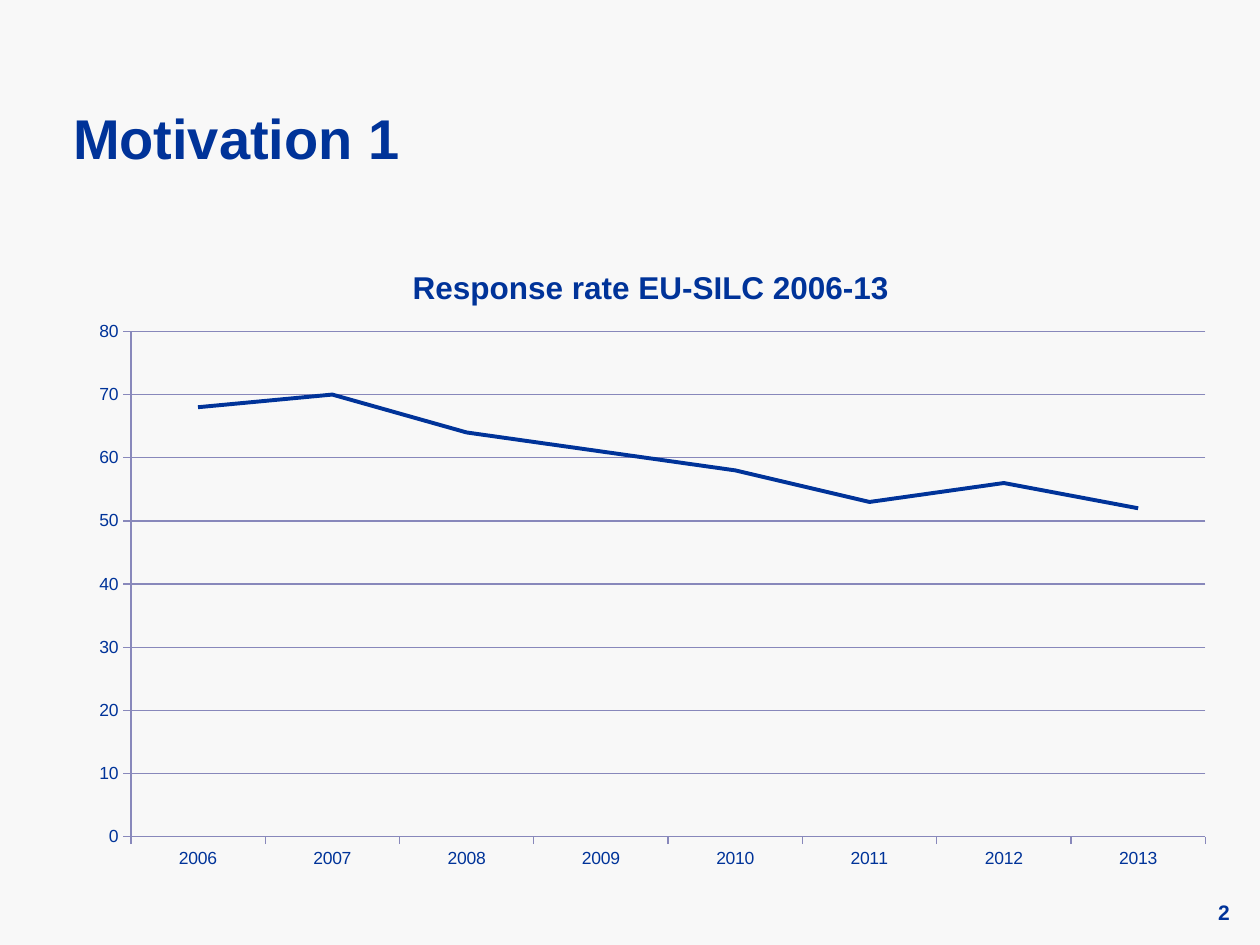
"""Build a slide with a line chart of EU-SILC response rates."""
import lxml.etree
import pptx
import pptx.chart.data
import pptx.dml.color
import pptx.enum.chart
import pptx.enum.text
import pptx.oxml.ns
import pptx.util

NAVY = pptx.dml.color.RGBColor(0x00, 0x33, 0x99)
GRID = pptx.dml.color.RGBColor(0x88, 0x88, 0xBB)
PAPER = pptx.dml.color.RGBColor(0xF8, 0xF8, 0xF8)
FONT = "Arial"
WIDTH, HEIGHT = pptx.util.Inches(10), pptx.util.Inches(7.5)
LEFT, CONTENT_WIDTH = 0.058, 0.917
RATES = {"2006": 68, "2007": 70, "2008": 64, "2009": 61,
         "2010": 58, "2011": 53, "2012": 56, "2013": 52}
PLOT_AREA = {"x": 0.05, "y": 0.14, "w": 0.93, "h": 0.79}


def place(left, top, width, height):
    """Turn shares of the slide's size into lengths."""
    return (int(left * WIDTH), int(top * HEIGHT),
            int(width * WIDTH), int(height * HEIGHT))


def style_font(font, size, bold=False):
    font.name, font.size, font.bold = FONT, pptx.util.Pt(size), bold
    font.color.rgb = NAVY


def add_text(slide, text, box, size, alignment, anchor):
    frame = slide.shapes.add_textbox(*place(*box)).text_frame
    frame.word_wrap = True
    frame.margin_left = frame.margin_right = 0
    frame.margin_top = frame.margin_bottom = 0
    frame.vertical_anchor = anchor
    paragraph = frame.paragraphs[0]
    paragraph.text = text
    paragraph.alignment = alignment
    style_font(paragraph.font, size, bold=True)


def style_line(line, color, width):
    line.color.rgb = color
    line.width = pptx.util.Pt(width)


def set_plot_area(chart, shares):
    """Fix the inner plot area as shares of the chart's size."""
    tag = pptx.oxml.ns.qn
    plot_area = chart.plots[0]._element.getparent()
    for layout in plot_area.findall(tag("c:layout")):
        plot_area.remove(layout)
    layout = lxml.etree.Element(tag("c:layout"))
    plot_area.insert(0, layout)
    manual = lxml.etree.SubElement(layout, tag("c:manualLayout"))
    settings = {"layoutTarget": "inner", "xMode": "edge", "yMode": "edge", **shares}
    for name, value in settings.items():
        lxml.etree.SubElement(manual, tag(f"c:{name}")).set("val", str(value))


def add_line_chart(slide, title, rates, box):
    data = pptx.chart.data.CategoryChartData(number_format="0")
    data.categories = list(rates)
    data.add_series("Series 1", list(rates.values()))
    chart = slide.shapes.add_chart(
        pptx.enum.chart.XL_CHART_TYPE.LINE, *place(*box), data).chart
    style_font(chart.font, 10)
    chart.has_legend = False
    chart.has_title = True
    chart.chart_title.include_in_layout = False
    heading = chart.chart_title.text_frame.paragraphs[0]
    heading.text = title
    style_font(heading.font, 18, bold=True)

    for axis in (chart.category_axis, chart.value_axis):
        axis.major_tick_mark = pptx.enum.chart.XL_TICK_MARK.OUTSIDE
        axis.minor_tick_mark = pptx.enum.chart.XL_TICK_MARK.NONE
        style_line(axis.format.line, GRID, 0.75)
    values = chart.value_axis
    values.minimum_scale, values.maximum_scale, values.major_unit = 0, 80, 10
    values.tick_labels.number_format = "0"
    values.tick_labels.number_format_is_linked = False
    style_line(values.major_gridlines.format.line, GRID, 0.75)

    chart.plots[0].vary_by_categories = False
    series = chart.plots[0].series[0]
    series.smooth = False
    series.marker.style = pptx.enum.chart.XL_MARKER_STYLE.NONE
    style_line(series.format.line, NAVY, 2.25)
    set_plot_area(chart, PLOT_AREA)


def main():
    presentation = pptx.Presentation()
    presentation.slide_width, presentation.slide_height = WIDTH, HEIGHT
    slide = presentation.slides.add_slide(presentation.slide_layouts[6])
    slide.background.fill.solid()
    slide.background.fill.fore_color.rgb = PAPER
    align, anchor = pptx.enum.text.PP_ALIGN, pptx.enum.text.MSO_ANCHOR
    add_text(slide, "Motivation 1", (LEFT, 0.11, CONTENT_WIDTH, 0.12),
             32, align.LEFT, anchor.TOP)
    add_text(slide, "2", (0.925, 0.948, 0.051, 0.035),
             12, align.RIGHT, anchor.MIDDLE)
    add_line_chart(slide, "Response rate EU-SILC 2006-13", RATES,
                   (LEFT, 0.256, CONTENT_WIDTH, 0.677))
    presentation.save("out.pptx")


if __name__ == "__main__":
    main()
